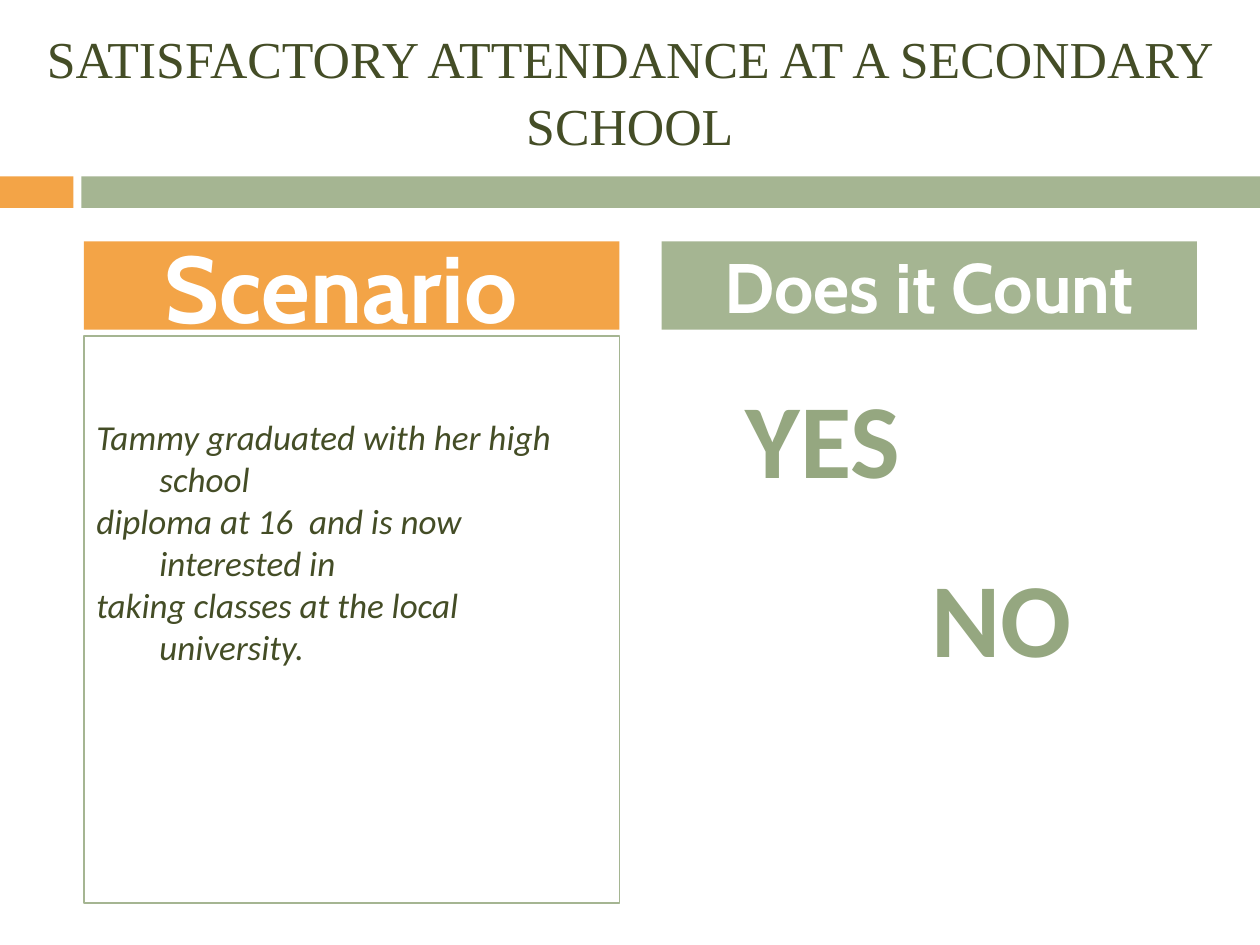
from pptx import Presentation
from pptx.dml.color import RGBColor
from pptx.enum import shapes, text
from pptx.util import Pt

ORANGE, GREEN, DARK, SAGE, WHITE = "F3A447", "A5B592", "444D26", "95A780", "FFFFFF"
LEFT, RIGHT, WIDE = 48, 378, 306


def paint(item, color):
    item.solid()
    item.fore_color.rgb = RGBColor.from_string(color)


def write(shape, lines, font, size, color, bold=False, italic=False,
          align=text.PP_ALIGN.CENTER, anchor=text.MSO_ANCHOR.MIDDLE):
    frame = shape.text_frame
    frame.word_wrap = True
    frame.auto_size = text.MSO_AUTO_SIZE.NONE
    frame.vertical_anchor = anchor
    frame.text = "\n".join(lines)
    for para in frame.paragraphs:
        para.alignment = align
        para.font.name = font
        para.font.size = Pt(size)
        para.font.bold = bold
        para.font.italic = italic
        paint(para.font.fill, color)
    return frame


def block(slide, x, y, w, h, fill=None, line=None):
    shape = slide.shapes.add_shape(
        shapes.MSO_SHAPE.RECTANGLE, Pt(x), Pt(y), Pt(w), Pt(h))
    shape.shadow.inherit = False
    for part, color in ((shape.fill, fill), (shape.line.fill, line)):
        if color:
            paint(part, color)
        else:
            part.background()
    return shape


def head(slide, x, label, size, fill):
    shape = block(slide, x, 138, WIDE, 50.4, fill)
    frame = write(shape, [label], "Cabin", size, WHITE, bold=True)
    frame.paragraphs[0].space_before = Pt(7)


def story(slide, lines):
    shape = block(slide, LEFT, 192, WIDE, 324, line=GREEN)
    shape.line.width = Pt(0.75)
    frame = write(shape, lines, "Calibri", 20, DARK, italic=True,
                  align=text.PP_ALIGN.LEFT, anchor=text.MSO_ANCHOR.TOP)
    frame.margin_top = Pt(45.5)
    for para in frame.paragraphs:
        props = para._p.get_or_add_pPr()
        props.set("marL", str(Pt(36)))
        props.set("indent", str(Pt(-36)))


def answer(slide, x, y, label):
    box = slide.shapes.add_textbox(Pt(x), Pt(y), Pt(162), Pt(80))
    write(box, [label], "Calibri", 60, SAGE, bold=True,
          anchor=text.MSO_ANCHOR.TOP)


def title(slide, label):
    shape = slide.shapes.title
    shape.left, shape.top, shape.width, shape.height = Pt(0), Pt(0), Pt(720), Pt(102)
    frame = write(shape, [label], "Times New Roman", 29.6, DARK)
    frame.paragraphs[0].line_spacing = 1.07


def main():
    deck = Presentation()
    deck.slide_width, deck.slide_height = Pt(720), Pt(540)
    slide = deck.slides.add_slide(deck.slide_layouts[5])
    title(slide, "SATISFACTORY ATTENDANCE AT A SECONDARY SCHOOL")
    block(slide, 0, 100.8, 42, 18, ORANGE)
    block(slide, 46.5, 100.8, 673.5, 18, GREEN)
    story(slide, ["Tammy graduated with her high school",
                  "diploma at 16  and is now interested in",
                  "taking classes at the local university."])
    head(slide, LEFT, "Scenario ", 54, ORANGE)
    head(slide, RIGHT, "Does it Count", 40, GREEN)
    answer(slide, 396, 210, "YES ")
    answer(slide, 498, 312, "NO ")
    deck.save("out.pptx")


if __name__ == "__main__":
    main()
